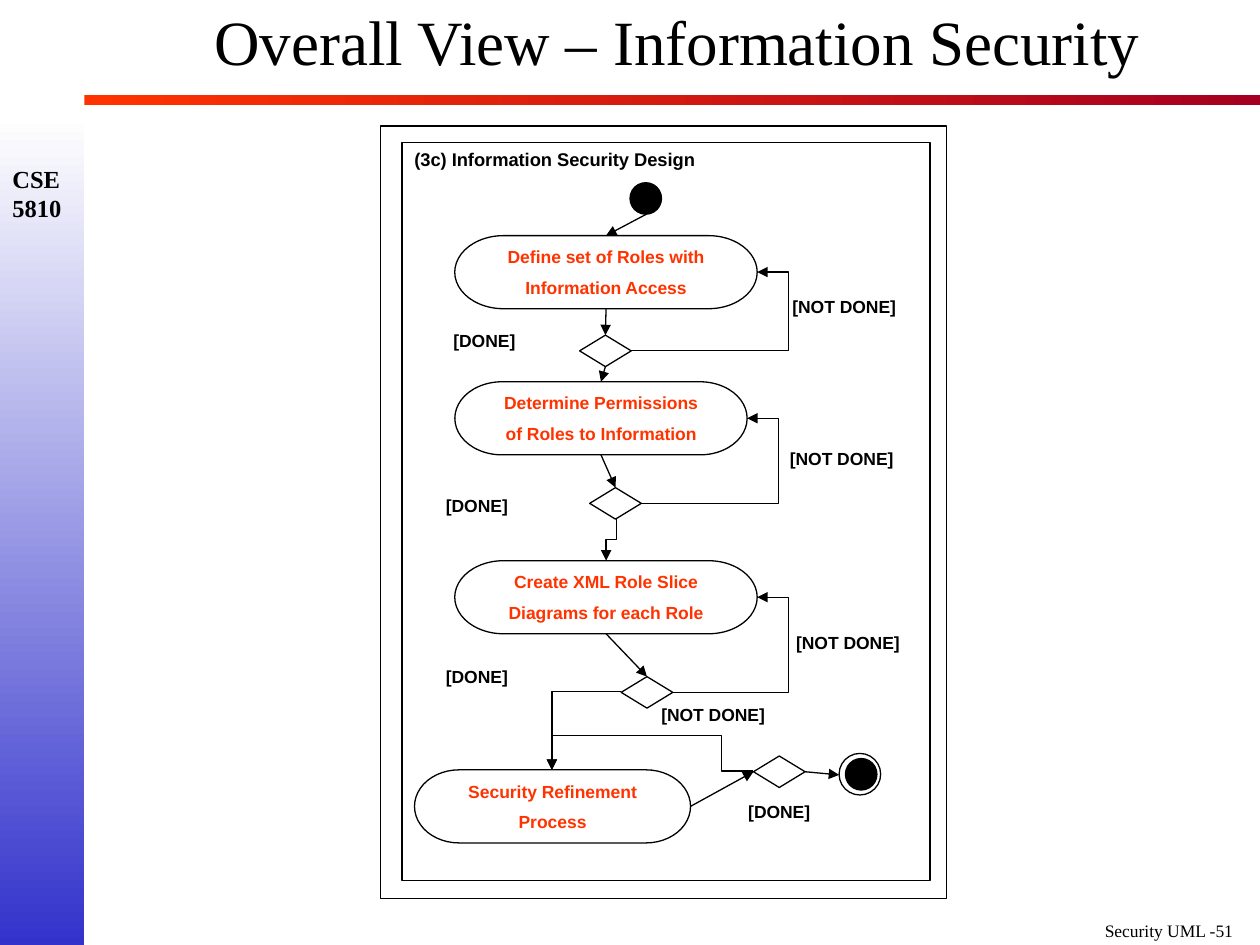
from lxml.etree import SubElement
from pptx import Presentation
from pptx.dml.color import RGBColor
from pptx.enum.shapes import MSO_CONNECTOR, MSO_SHAPE
from pptx.enum.text import MSO_ANCHOR, MSO_AUTO_SIZE, PP_ALIGN
from pptx.oxml.ns import qn
from pptx.util import Inches, Pt

BLACK = RGBColor(0x00, 0x00, 0x00)
WHITE = RGBColor(0xFF, 0xFF, 0xFF)
BLUE = RGBColor(0x33, 0x33, 0xCC)
ORANGE = RGBColor(0xFF, 0x33, 0x00)
CRIMSON = RGBColor(0xA5, 0x00, 0x21)
SERIF, SANS = "Times New Roman", "Arial"
TOP, LEFT, BOTTOM, RIGHT = range(4)
LINE_WIDTH = Pt(0.75)
STEP_H = 0.58
DIAMOND_W, DIAMOND_H = 0.41, 0.25
LOOP_GAP = 0.25

STEPS = [
    (0.59, 0.87, 2.4, ["Define set of Roles with", "Information Access"]),
    (0.59, 2.03, 2.32, ["Determine Permissions", "of Roles to Information"]),
    (0.59, 3.45, 2.4, ["Create XML Role Slice", "Diagrams for each Role"]),
    (0.27, 5.11, 2.19, ["Security Refinement", "Process"]),
]
DECISIONS = [(1.58, 1.66), (1.66, 2.87), (1.91, 4.37), (2.96, 5.0)]
LABELS = {
    "[DONE]": (0.7, [(0.48, 1.57), (0.42, 2.88), (0.42, 4.24), (2.82, 5.31)]),
    "[NOT DONE]": (1.04, [(3.17, 1.3), (3.15, 2.51), (3.2, 3.97), (2.13, 4.54)]),
}


def write(tf, lines, font, size, color, bold=False, align=PP_ALIGN.LEFT, gap=0):
    """Fill a text frame with one paragraph per line."""
    for i, line in enumerate(lines):
        p = tf.paragraphs[0] if i == 0 else tf.add_paragraph()
        p.alignment = align
        if i and gap:
            p.space_before = Pt(gap)
        r = p.add_run()
        r.text = line
        r.font.name, r.font.size, r.font.bold = font, Pt(size), bold
        r.font.color.rgb = color


def add_text(slide, box, lines, font, size, bold=False, wrap=True):
    """Add a text box."""
    sp = slide.shapes.add_textbox(*map(Inches, box))
    sp.text_frame.word_wrap = wrap
    write(sp.text_frame, lines, font, size, BLACK, bold)


def add_outlined(slide, kind, box, fill=WHITE):
    """Add a filled shape with a thin black outline."""
    sp = slide.shapes.add_shape(kind, *map(Inches, box))
    sp.shadow.inherit = False
    sp.fill.solid()
    sp.fill.fore_color.rgb = fill
    sp.line.color.rgb = BLACK
    sp.line.width = LINE_WIDTH
    return sp


def add_gradient(slide, box, colors, angle):
    """Add a borderless rectangle with a two-colour gradient."""
    sp = slide.shapes.add_shape(MSO_SHAPE.RECTANGLE, *map(Inches, box))
    sp.shadow.inherit = False
    sp.line.fill.background()
    sp.fill.gradient()
    sp.fill.gradient_angle = angle
    for stop, color in zip(sp.fill.gradient_stops, colors):
        stop.color.rgb = color


def add_arrow(slide, kind, start=(0, 0), end=(0, 0)):
    """Add a connector with a triangle at its end."""
    cxn = slide.shapes.add_connector(kind, *map(Inches, (*start, *end)))
    cxn.line.color.rgb = BLACK
    cxn.line.width = LINE_WIDTH
    spPr = cxn.element.spPr
    SubElement(spPr.find(qn("a:ln")), qn("a:tailEnd"), type="triangle")
    SubElement(spPr, qn("a:effectLst"))
    return cxn


def add_elbow(slide, start, end, bends=3, adjust=(), rotation=0):
    """Add a bent arrow with its adjustments and rotation."""
    spPr = add_arrow(slide, MSO_CONNECTOR.ELBOW, start, end).element.spPr
    spPr.find(qn("a:xfrm")).set("rot", str(rotation * 60000))
    geom = spPr.find(qn("a:prstGeom"))
    geom.set("prst", f"bentConnector{bends}")
    guides = geom.find(qn("a:avLst"))
    if guides is None:
        guides = SubElement(geom, qn("a:avLst"))
    for i, value in enumerate(adjust, 1):
        name = "adj1" if bends == 3 else f"adj{i}"
        SubElement(guides, qn("a:gd"), name=name, fmla=f"val {round(value * 100000)}")


def join(slide, first, first_side, second, second_side):
    """Join two shapes with a straight arrow."""
    cxn = add_arrow(slide, MSO_CONNECTOR.STRAIGHT)
    cxn.begin_connect(first, first_side)
    cxn.end_connect(second, second_side)


def add_title(slide, left, top, width, height):
    """Place and format the title."""
    sp = slide.shapes.title
    sp.left, sp.top, sp.width, sp.height = map(Inches, (left, top, width, height))
    tf = sp.text_frame
    tf.word_wrap = True
    tf.auto_size = MSO_AUTO_SIZE.NONE
    tf.vertical_anchor = MSO_ANCHOR.MIDDLE
    write(tf, ["Overall View – Information Security"], SERIF, 36, BLACK,
          align=PP_ALIGN.CENTER)
    tf.paragraphs[0].line_spacing = 0.8


def add_surround(slide, left, top, width, height):
    """Draw the side band, title rule, course code and footer."""
    band = 0.67
    add_gradient(slide, (left, top + 0.92, band, height - 0.92), (WHITE, BLUE), 270)
    add_text(slide, (left + width - 1.33, top + 7.25, 1.33, 0.26),
             ["Security UML -51"], SERIF, 10)
    add_gradient(slide, (left + band, top + 0.75, width - band, 0.08),
                 (ORANGE, CRIMSON), 0)
    add_text(slide, (left, top + 1.25, band, 0.57), ["CSE", "5810"], SERIF, 14, True)


def add_activity_diagram(slide, left, top, width, height):
    """Draw the framed activity diagram."""
    def at(x, y):
        return left + x, top + y

    add_outlined(slide, MSO_SHAPE.RECTANGLE, (left, top, width, height))
    add_outlined(slide, MSO_SHAPE.RECTANGLE,
                 (*at(0.17, 0.13), width - 0.3, height - 0.27))
    add_text(slide, (*at(0.17, 0.13), width - 0.33, 0.28),
             ["(3c) Information Security Design"], SANS, 10.5, True)

    circle = MSO_SHAPE.FLOWCHART_CONNECTOR
    add_outlined(slide, circle, (*at(1.98, 0.45), 0.25, 0.25), BLACK)
    add_outlined(slide, circle, (*at(3.64, 4.98), 0.33, 0.33))
    add_outlined(slide, circle, (*at(3.69, 5.02), 0.25, 0.25), BLACK)

    steps = []
    for x, y, w, lines in STEPS:
        sp = add_outlined(slide, MSO_SHAPE.FLOWCHART_TERMINATOR,
                          (*at(x, y), w, STEP_H))
        sp.text_frame.word_wrap = False
        sp.text_frame.vertical_anchor = MSO_ANCHOR.MIDDLE
        write(sp.text_frame, lines, SANS, 10, ORANGE, True, PP_ALIGN.CENTER, 5.5)
        steps.append(sp)
    decisions = [add_outlined(slide, MSO_SHAPE.FLOWCHART_DECISION,
                              (*at(x, y), DIAMOND_W, DIAMOND_H))
                 for x, y in DECISIONS]

    entry = add_arrow(slide, MSO_CONNECTOR.STRAIGHT, at(2.11, 0.7))
    entry.end_connect(steps[0], TOP)
    for step, decision in zip(steps[:3], decisions):
        join(slide, step, BOTTOM, decision, TOP)
    join(slide, decisions[0], BOTTOM, steps[1], TOP)
    join(slide, steps[3], RIGHT, decisions[3], LEFT)
    leave = add_arrow(slide, MSO_CONNECTOR.STRAIGHT, end=at(3.64, 5.15))
    leave.begin_connect(decisions[3], RIGHT)

    for (x, y, w, _), (dx, dy) in zip(STEPS[:3], DECISIONS):
        start, end = dx + DIAMOND_W, x + w
        add_elbow(slide, at(start, dy + DIAMOND_H / 2), at(end, y + STEP_H / 2),
                  adjust=[1 + LOOP_GAP / (end - start)])
    add_elbow(slide, at(1.66, 3.24), at(2.0, 3.32), adjust=[0.5], rotation=90)
    add_elbow(slide, at(1.36, 5.11), at(1.91, 4.49), bends=2, rotation=180)
    add_elbow(slide, at(1.36, 5.11), at(2.96, 5.12), bends=4,
              adjust=[0.16, 29], rotation=180)

    for text, (w, places) in LABELS.items():
        for x, y in places:
            add_text(slide, (*at(x, y), w, 0.27), [text], SANS, 10, True, wrap=False)


def main():
    """Build the slide and save it."""
    prs = Presentation()
    prs.slide_width, prs.slide_height = Inches(10), Inches(7.5)
    slide = prs.slides.add_slide(prs.slide_layouts[5])
    add_surround(slide, 0, 0, 10, 7.5)
    add_title(slide, 0.71, 0, 9.33, 0.75)
    add_activity_diagram(slide, 3.02, 1, 4.49, 6.13)
    prs.save("out.pptx")


if __name__ == "__main__":
    main()
